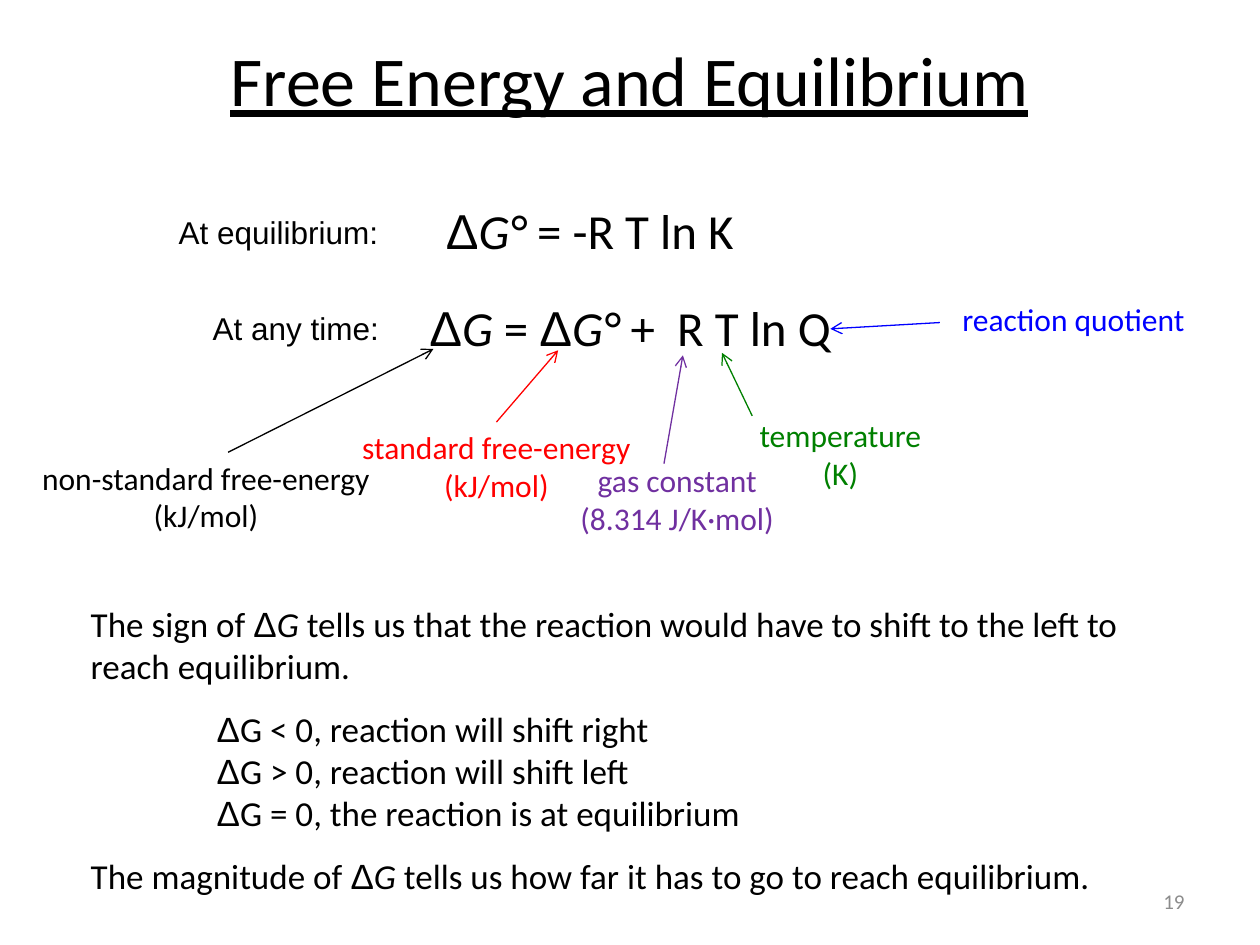
import pptx
import pptx.dml.color
import pptx.enum.shapes
import pptx.enum.text
import pptx.oxml
import pptx.oxml.ns
import pptx.util

Inches = pptx.util.Inches
Pt = pptx.util.Pt
ALIGN = pptx.enum.text.PP_ALIGN
ANCHOR = pptx.enum.text.MSO_ANCHOR
AUTO_SIZE = pptx.enum.text.MSO_AUTO_SIZE

BLACK = "000000"
SYMBOLS = ("G", "G°")

TERMS = [
    (["standard free-energy", "(kJ/mol)"], (2.76, 3.35, 2.36, 0.71), "FF0000", (3.94, 3.35), (4.43, 2.78)),
    (["gas constant", "(8.314 J/K·mol)"], (4.49, 3.61, 1.77, 0.71), "7030A0", (5.27, 3.68), (5.42, 2.82)),
    (["temperature", "(K)"], (5.91, 3.25, 1.52, 0.71), "008000", (5.97, 3.3), (5.73, 2.8)),
    (["reaction quotient"], (7.5, 2.33, 2.04, 0.4), "0000FF", (7.46, 2.56), (6.59, 2.61)),
    (["non-standard free-energy", "(kJ/mol)"], (0.22, 3.59, 2.83, 0.71), BLACK, (1.81, 3.59), (3.44, 2.77)),
]

EQUATIONS = [
    ("At equilibrium:", (1.32, 1.64, 1.8, 0.4),
     ["Δ", "G°", " = -R T ln K"], (3.44, 1.54, 2.49, 0.57)),
    ("At any time:", (1.59, 2.4, 1.53, 0.4),
     ["Δ", "G", " = ", "Δ", "G°", " +  R T ln Q"], (3.31, 2.31, 3.4, 0.57)),
]

EXPLANATION = [
    (["The sign of\u00a0", "Δ", "G",
      "\u00a0tells us that the reaction would have to shift to the left to reach equilibrium."], 0, 12),
    (["Δ", "G < 0, reaction will shift right"], 1, 0),
    (["Δ", "G > 0, reaction will shift left"], 1, 0),
    (["Δ", "G = 0, the reaction is at equilibrium"], 1, 12),
    (["The magnitude of\u00a0", "Δ", "G",
      "\u00a0tells us how far it has to go to reach equilibrium."], 0, 0),
]


def color(value):
    return pptx.dml.color.RGBColor.from_string(value)


def format_run(run, size, value=BLACK, name="Calibri"):
    run.font.size = Pt(size)
    run.font.name = name
    run.font.color.rgb = color(value)


def add_formula_runs(paragraph, pieces, size):
    for piece in pieces:
        run = paragraph.add_run()
        run.text = piece
        format_run(run, size, name="Arial" if piece == "Δ" else "Calibri")
        run.font.italic = piece in SYMBOLS


def place(shape, box):
    shape.left, shape.top, shape.width, shape.height = map(Inches, box)


def add_text_box(slide, box):
    shape = slide.shapes.add_textbox(*map(Inches, box))
    shape.text_frame.word_wrap = False
    shape.text_frame.auto_size = AUTO_SIZE.SHAPE_TO_FIT_TEXT
    return shape.text_frame


def add_label(slide, lines, box, size=18, value=BLACK, name="Calibri", alignment=ALIGN.CENTER):
    text_frame = add_text_box(slide, box)
    text_frame.text = "\n".join(lines)
    for paragraph in text_frame.paragraphs:
        paragraph.alignment = alignment
        for run in paragraph.runs:
            format_run(run, size, value, name)
    return text_frame


def add_arrow(slide, start, end, value):
    connector = slide.shapes.add_connector(
        pptx.enum.shapes.MSO_CONNECTOR.STRAIGHT, *map(Inches, start + end))
    connector.line.color.rgb = color(value)
    connector.line.width = Pt(0.75)
    line = connector.line._get_or_add_ln()
    line.append(pptx.oxml.parse_xml(
        f'<a:tailEnd {pptx.oxml.ns.nsdecls("a")} type="arrow"/>'))
    connector._element.spPr.append(pptx.oxml.parse_xml(
        f'<a:effectLst {pptx.oxml.ns.nsdecls("a")}/>'))


def fill_title(slide):
    title = slide.shapes.title
    place(title, (1.27, 0, 7.45, 1.25))
    title.text_frame.text = "Free Energy and Equilibrium"
    title.text_frame.auto_size = AUTO_SIZE.NONE
    title.text_frame.vertical_anchor = ANCHOR.MIDDLE
    run = title.text_frame.paragraphs[0].runs[0]
    format_run(run, 40)
    run.font.underline = True


def fill_explanation(slide):
    body = slide.placeholders[1]
    place(body, (0.62, 4.72, 8.77, 2.46))
    body.fill.solid()
    body.fill.fore_color.rgb = color("FFFFFF")
    text_frame = body.text_frame
    text_frame.auto_size = AUTO_SIZE.NONE
    text_frame.vertical_anchor = ANCHOR.MIDDLE
    for index, (pieces, margin, space_after) in enumerate(EXPLANATION):
        paragraph = text_frame.add_paragraph() if index else text_frame.paragraphs[0]
        paragraph.space_before = Pt(0)
        paragraph.space_after = Pt(space_after)
        properties = paragraph._p.get_or_add_pPr()
        properties.set("marL", str(Inches(margin)))
        properties.set("indent", "0")
        properties.append(pptx.oxml.parse_xml(
            f'<a:buNone {pptx.oxml.ns.nsdecls("a")}/>'))
        add_formula_runs(paragraph, pieces, 20)


def main():
    presentation = pptx.Presentation()
    presentation.slide_width = Inches(10)
    presentation.slide_height = Inches(7.5)
    slide = presentation.slides.add_slide(presentation.slide_layouts[1])
    fill_title(slide)
    for caption, caption_box, formula, formula_box in EQUATIONS:
        add_label(slide, [caption], caption_box, name="Arial", alignment=ALIGN.LEFT)
        add_formula_runs(add_text_box(slide, formula_box).paragraphs[0], formula, 28)
    for lines, box, value, start, end in TERMS:
        add_label(slide, lines, box, value=value)
        add_arrow(slide, start, end, value)
    fill_explanation(slide)
    number = add_label(slide, ["19"], (7.17, 6.95, 2.33, 0.4), 12, "8C8C8C", alignment=ALIGN.RIGHT)
    number.word_wrap = True
    number.auto_size = AUTO_SIZE.NONE
    number.vertical_anchor = ANCHOR.MIDDLE
    presentation.save("out.pptx")


if __name__ == "__main__":
    main()
